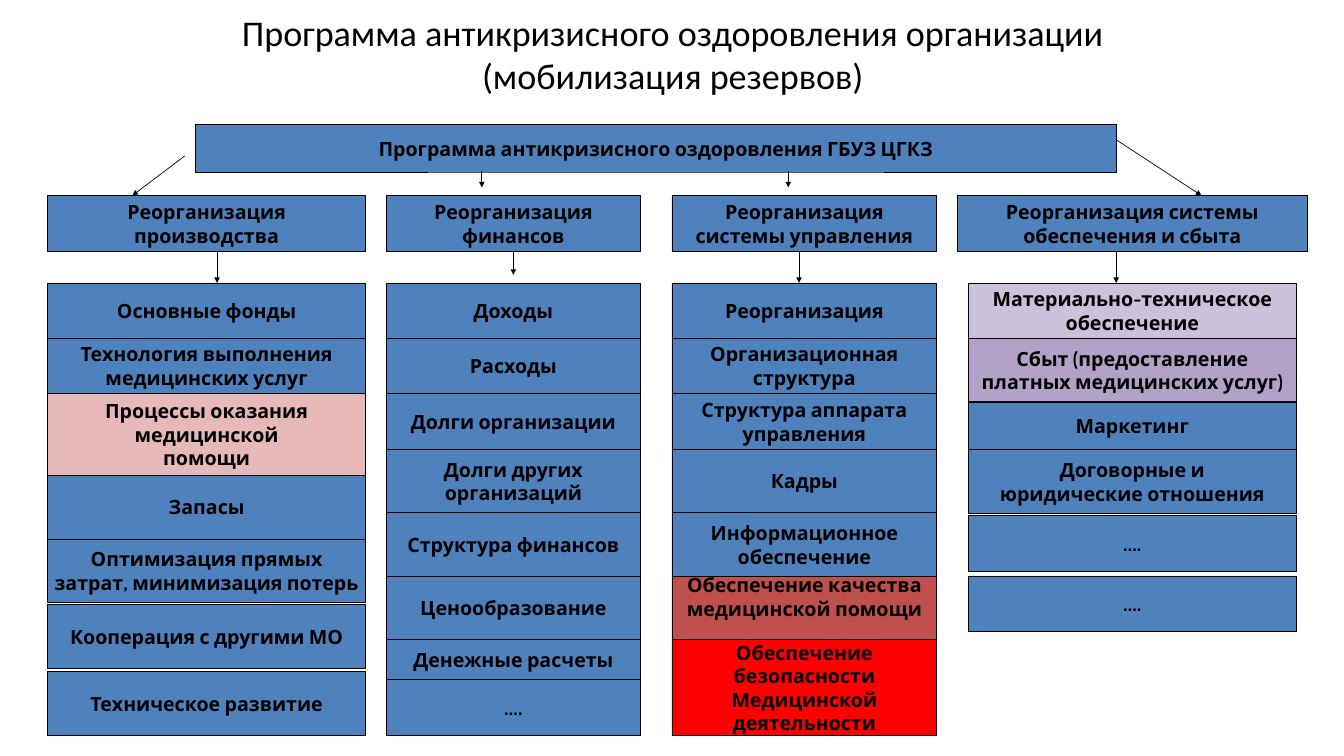
from dataclasses import dataclass

from lxml import etree
from pptx import Presentation
from pptx.dml.color import RGBColor
from pptx.enum.shapes import MSO_CONNECTOR, MSO_SHAPE
from pptx.enum.text import MSO_ANCHOR, PP_ALIGN
from pptx.oxml.ns import qn
from pptx.util import Inches, Pt

RECTANGLE = MSO_SHAPE.RECTANGLE
STRAIGHT = MSO_CONNECTOR.STRAIGHT
MIDDLE = MSO_ANCHOR.MIDDLE
CENTER = PP_ALIGN.CENTER
BOTTOM_SIDE = 2

BLUE = "4F81BD"
PINK = "E6B9B8"
LILAC = "CCC1DA"
PURPLE = "B3A2C7"
BRICK = "C0504D"
RED = "FF0000"
BLACK = "000000"

HEADER_TOP, HEADER_BOTTOM = 2.91, 3.74
STACK_TOP = 4.21


@dataclass
class Row:
    """One box of a stack: it reaches from the row above (plus gap) to bottom."""
    text: str
    bottom: float
    fill: str = BLUE
    gap: float = 0
    lift: float = 0


@dataclass
class Column:
    header: str
    header_left: float
    header_width: float
    left: float
    width: float
    rows: list


COLUMNS = [
    Column("Реорганизация\nпроизводства", 0.71, 4.73, 0.71, 4.73, [
        Row("Основные фонды", 5.03),
        Row("Технология выполнения\nмедицинских услуг", 5.86),
        Row("Процессы оказания\nмедицинской\nпомощи", 7.07, PINK),
        Row("Запасы", 8.02),
        Row("Оптимизация прямых\nзатрат, минимизация потерь", 8.97),
        Row("Кооперация с другими МО", 9.95, gap=0.03),
        Row("Техническое развитие", 10.94, gap=0.04),
    ]),
    Column("Реорганизация\nфинансов", 5.75, 3.78, 5.75, 3.78, [
        Row("Доходы", 5.03),
        Row("Расходы", 5.86),
        Row("Долги организации", 6.69),
        Row("Долги других\nорганизаций", 7.63),
        Row("Структура финансов", 8.58),
        Row("Ценообразование", 9.52),
        Row("Денежные расчеты", 10.11),
        Row("….", 10.94),
    ]),
    Column("Реорганизация\nсистемы управления", 10, 3.94, 10, 3.94, [
        Row("Реорганизация", 5.03),
        Row("Организационная\nструктура", 5.86),
        Row("Структура аппарата\nуправления", 6.69),
        Row("Кадры", 7.63),
        Row("Информационное\nобеспечение", 8.58),
        Row("Обеспечение качества\nмедицинской помощи", 9.52, BRICK, lift=0.34),
        Row("Обеспечение\nбезопасности\nМедицинской\nдеятельности", 10.94, RED),
    ]),
    Column("Реорганизация системы\nобеспечения и сбыта", 14.25, 5.2, 14.41, 4.88, [
        Row("Материально-техническое\nобеспечение", 5.03, LILAC),
        Row("Сбыт (предоставление\nплатных медицинских услуг)", 5.98, PURPLE),
        Row("Маркетинг", 6.69),
        Row("Договорные и\nюридические отношения", 7.64),
        Row("….", 8.5, gap=0.03),
        Row("….", 9.4, gap=0.07),
    ]),
]

PROGRAM_ARROWS = [
    (2.75, 2.32, 1.97, HEADER_TOP),
    (7.17, 2.55, 7.17, 2.79),
    (11.73, 2.55, 11.73, 2.79),
    (16.61, 2.08, 17.88, HEADER_TOP),
]
STACK_ARROWS = [(3.23, STACK_TOP), (7.64, 4.09), (11.89, STACK_TOP), (16.61, STACK_TOP)]


def color(hex_value):
    return RGBColor.from_string(hex_value)


def set_all(target, values):
    for name, value in values.items():
        setattr(target, name, value)


class Page:
    """Holds the style and the current slide."""

    title_font = {"name": "Calibri", "size": Pt(38.7)}
    box_font = {"name": "Cabin", "size": Pt(21), "bold": True}
    line_width = Pt(0.75)

    def __init__(self, deck):
        self.slide = deck.slides.add_slide(deck.slide_layouts[6])

    def fill_text(self, frame, text, font):
        frame.text = text
        for para in frame.paragraphs:
            para.alignment = CENTER
            set_all(para.font, font)
            para.font.color.rgb = color(BLACK)

    def title(self, text, left, top, width, height):
        box = self.slide.shapes.add_textbox(*map(Inches, (left, top, width, height)))
        set_all(box.text_frame, {"word_wrap": True, "vertical_anchor": MIDDLE})
        self.fill_text(box.text_frame, text, self.title_font)

    def box(self, text, left, top, width, height, fill=BLUE, lift=0):
        """Add a bordered box; lift is extra room kept free under the text."""
        box = self.slide.shapes.add_shape(
            RECTANGLE, *map(Inches, (left, top, width, height)))
        box.shadow.inherit = False
        box.fill.solid()
        box.fill.fore_color.rgb = color(fill)
        box.line.color.rgb = color(BLACK)
        box.line.width = self.line_width
        set_all(box.text_frame, {
            "word_wrap": False,
            "vertical_anchor": MIDDLE,
            "margin_left": Inches(0.18),
            "margin_right": Inches(0.18),
            "margin_top": Inches(0.09),
            "margin_bottom": Inches(0.09 + lift),
        })
        self.fill_text(box.text_frame, text, self.box_font)
        return box

    def stack(self, column):
        top = STACK_TOP
        for row in column.rows:
            top += row.gap
            self.box(row.text, column.left, top, column.width, row.bottom - top,
                     row.fill, row.lift)
            top = row.bottom

    def arrow(self, *ends):
        arrow = self.slide.shapes.add_connector(STRAIGHT, *map(Inches, ends))
        arrow.line.color.rgb = color(BLACK)
        arrow.line.width = self.line_width
        line = arrow._element.spPr.find(qn("a:ln"))
        etree.SubElement(line, qn("a:tailEnd"), type="triangle")
        etree.SubElement(arrow._element.spPr, qn("a:effectLst"))
        return arrow


def main():
    deck = Presentation()
    deck.slide_width, deck.slide_height = Inches(20), Inches(11.25)
    page = Page(deck)
    page.title("Программа антикризисного оздоровления организации\n(мобилизация резервов)",
               1.02, 0.46, 17.98, 0.68)
    page.box("Программа антикризисного оздоровления ГБУЗ ЦГКЗ", 2.91, 1.85, 13.7, 0.71)
    for ends in PROGRAM_ARROWS:
        page.arrow(*ends)

    for column, (x, end) in zip(COLUMNS, STACK_ARROWS):
        header = page.box(column.header, column.header_left, HEADER_TOP,
                          column.header_width, HEADER_BOTTOM - HEADER_TOP)
        page.stack(column)
        arrow = page.arrow(x, HEADER_BOTTOM, x, end)
        if abs(column.header_left + column.header_width / 2 - x) < 0.01:
            arrow.begin_connect(header, BOTTOM_SIDE)

    deck.save("out.pptx")


if __name__ == "__main__":
    main()
